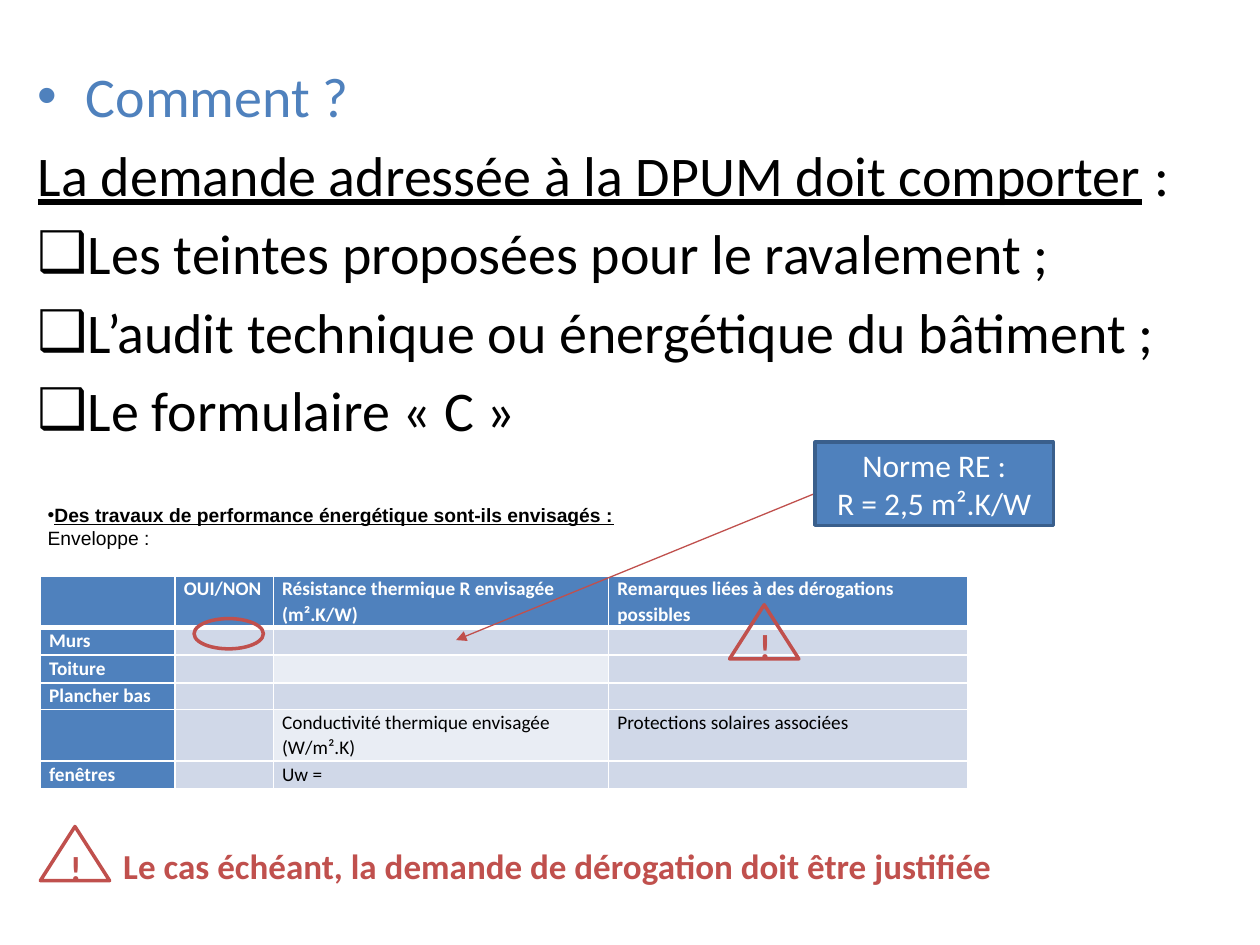
from lxml import etree
from pptx import Presentation
from pptx.dml.color import RGBColor
from pptx.enum import shapes, text
from pptx.oxml import ns
from pptx.util import Inches, Pt

BLUE = RGBColor(0x4F, 0x81, 0xBD)
DARK_BLUE = RGBColor(0x3A, 0x5F, 0x8C)
RED = RGBColor(0xC0, 0x50, 0x4D)
BAND = RGBColor(0xD0, 0xD8, 0xE8)
PALE = RGBColor(0xE9, 0xED, 0xF4)
BLACK = RGBColor(0, 0, 0)
WHITE = RGBColor(255, 255, 255)

REQUEST = [
    ("•", BLUE, [("Comment ?", False)]),
    (None, BLACK, [("La demande adressée à la DPUM doit comporter", True), (" :", False)]),
    ("❑", BLACK, [("Les teintes proposées pour le ravalement ;", False)]),
    ("❑", BLACK, [("L’audit technique ou énergétique du bâtiment ;", False)]),
    ("❑", BLACK, [("Le formulaire « C »", False)]),
]
WORKS = [
    ("•", "Des travaux de performance énergétique sont-ils envisagés :", True),
    (None, "Enveloppe :", False),
]
ENVELOPE = [
    ["", "OUI/NON", "Résistance thermique R envisagée (m².K/W)",
     "Remarques liées à des dérogations possibles"],
    ["Murs", "", "", ""],
    ["Toiture", "", "", ""],
    ["Plancher bas", "", "", ""],
    ["", "", "Conductivité thermique envisagée (W/m².K)", "Protections solaires associées"],
    ["fenêtres", "", "Uw =", ""],
]
COLUMN_WIDTHS = [1.07, 0.78, 2.66, 2.85]
ROW_HEIGHTS = [0.41, 0.22, 0.22, 0.21, 0.41, 0.22]
PALE_CELLS = {(2, 2), (4, 2)}
STANDARD = ["Norme RE :", "R = 2,5 m².K/W"]
WARNING = "Le cas échéant, la demande de dérogation doit être justifiée"
WARNING_SIGNS = [(5.79, 4.8), (0.32, 6.56)]


def box(left, top, width, height):
    return [Inches(v) for v in (left, top, width, height)]


def add_run(paragraph, words, size, color, bold=False, underline=False, font="Calibri"):
    run = paragraph.add_run()
    run.text = words
    run.font.name, run.font.size = font, Pt(size)
    run.font.bold, run.font.underline = bold, underline
    run.font.color.rgb = color


def paragraphs(frame, count):
    return [frame.paragraphs[0]] + [frame.add_paragraph() for _ in range(count - 1)]


def set_bullet(paragraph, char, hang=0):
    props = paragraph._p.get_or_add_pPr()
    indent = Inches(hang) if char else 0
    props.set("marL", str(indent))
    props.set("indent", str(-indent))
    if char:
        etree.SubElement(props, ns.qn("a:buFont"), typeface="Arial")
        etree.SubElement(props, ns.qn("a:buChar"), char=char)
    else:
        etree.SubElement(props, ns.qn("a:buNone"))


def set_border(cell, side, width):
    line = etree.SubElement(cell._tc.get_or_add_tcPr(), ns.qn("a:" + side), w=str(Pt(width)))
    solid = etree.SubElement(line, ns.qn("a:solidFill"))
    etree.SubElement(solid, ns.qn("a:srgbClr"), val=str(WHITE))


def add_figure(slide, kind, place, line, fill=None):
    figure = slide.shapes.add_shape(kind, *box(*place))
    figure.shadow.inherit = False
    if fill is None:
        figure.fill.background()
    else:
        figure.fill.solid()
        figure.fill.fore_color.rgb = fill
    figure.line.color.rgb, figure.line.width = line, Pt(2)
    figure.text_frame.vertical_anchor = text.MSO_ANCHOR.MIDDLE
    return figure


def add_request(slide):
    slide.shapes.title._element.getparent().remove(slide.shapes.title._element)
    body = slide.placeholders[1]
    body.left, body.top, body.width, body.height = box(0.2, 0.44, 9.69, 6.26)
    for paragraph, (char, color, runs) in zip(paragraphs(body.text_frame, len(REQUEST)), REQUEST):
        set_bullet(paragraph, char, 0.38)
        for words, underline in runs:
            add_run(paragraph, words, 32, color, underline=underline)


def add_envelope(slide):
    place = box(0.32, 4.57, sum(COLUMN_WIDTHS), sum(ROW_HEIGHTS))
    table = slide.shapes.add_table(len(ENVELOPE), len(COLUMN_WIDTHS), *place).table
    for column, width in zip(table.columns, COLUMN_WIDTHS):
        column.width = Inches(width)
    for r, (row, height) in enumerate(zip(ENVELOPE, ROW_HEIGHTS)):
        table.rows[r].height = Inches(height)
        for c, words in enumerate(row):
            cell = table.cell(r, c)
            heading = r == 0 or c == 0
            cell.margin_left = cell.margin_right = Inches(0.07)
            cell.margin_top = cell.margin_bottom = 0
            for side, width in (("lnL", 1), ("lnR", 1), ("lnT", 3 if r == 1 else 1),
                                ("lnB", 3 if r == 0 else 1)):
                set_border(cell, side, width)
            cell.fill.solid()
            cell.fill.fore_color.rgb = BLUE if heading else PALE if (r, c) in PALE_CELLS else BAND
            paragraph = cell.text_frame.paragraphs[0]
            if words:
                paragraph.line_spacing, paragraph.space_after = 1.07, Pt(12)
                add_run(paragraph, words, 11, WHITE if heading else BLACK, bold=heading)
            else:
                etree.SubElement(paragraph._p, ns.qn("a:endParaRPr"), sz="1100")


def add_works(slide):
    frame = slide.shapes.add_textbox(*box(0.28, 3.94, 6.22, 0.47)).text_frame
    frame.word_wrap = True
    frame.vertical_anchor = text.MSO_ANCHOR.MIDDLE
    for paragraph, (char, words, strong) in zip(paragraphs(frame, len(WORKS)), WORKS):
        set_bullet(paragraph, char)
        add_run(paragraph, words, 11, BLACK, strong, strong, "Arial")


def add_standard(slide):
    add_figure(slide, shapes.MSO_SHAPE.OVAL, (1.54, 4.91, 0.55, 0.24), RED)
    arrow = slide.shapes.add_connector(
        shapes.MSO_CONNECTOR.STRAIGHT, *box(6.46, 3.92, 3.62, 5.08))
    arrow.line.color.rgb, arrow.line.width = RED, Pt(0.75)
    etree.SubElement(arrow.line._get_or_add_ln(), ns.qn("a:tailEnd"), type="triangle")
    etree.SubElement(arrow._element.spPr, ns.qn("a:effectLst"))
    label = add_figure(slide, shapes.MSO_SHAPE.RECTANGLE, (6.47, 3.51, 1.89, 0.66), DARK_BLUE, BLUE)
    for paragraph, words in zip(paragraphs(label.text_frame, len(STANDARD)), STANDARD):
        paragraph.alignment = text.PP_ALIGN.CENTER
        add_run(paragraph, words, 18, WHITE)


def add_warning(slide):
    frame = slide.shapes.add_textbox(*box(0.88, 6.65, 7.67, 0.44)).text_frame
    frame.word_wrap = True
    add_run(frame.paragraphs[0], WARNING, 20, RED, bold=True)
    for left, top in WARNING_SIGNS:
        sign = add_figure(slide, shapes.MSO_SHAPE.ISOSCELES_TRIANGLE, (left, top, 0.55, 0.43), RED)
        paragraph = sign.text_frame.paragraphs[0]
        paragraph.alignment = text.PP_ALIGN.CENTER
        add_run(paragraph, "!", 20, RED, bold=True)


def main():
    deck = Presentation()
    deck.slide_width, deck.slide_height = Inches(10), Inches(7.5)
    slide = deck.slides.add_slide(deck.slide_layouts[1])
    for add_part in (add_request, add_envelope, add_works, add_standard, add_warning):
        add_part(slide)
    deck.save("out.pptx")


if __name__ == "__main__":
    main()
